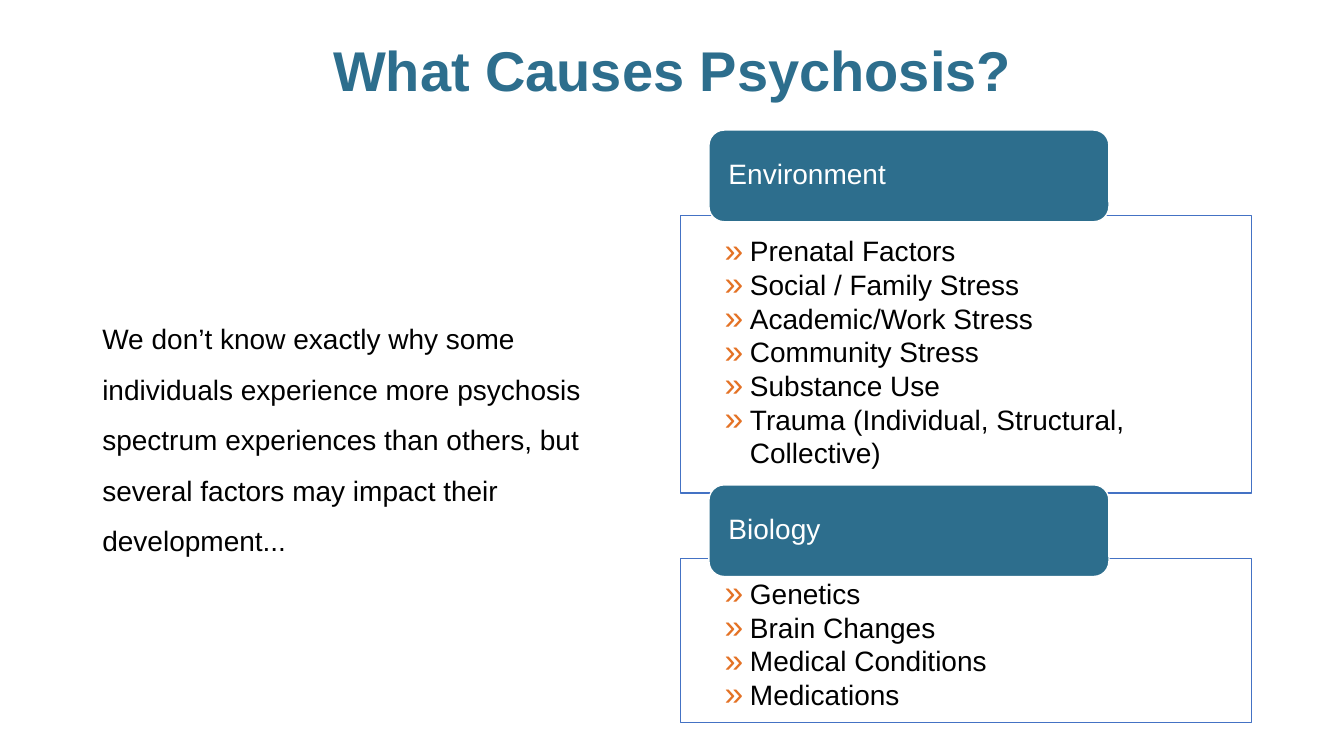
import pptx
import pptx.dml.color
import pptx.enum.shapes
import pptx.enum.text
import pptx.oxml
import pptx.oxml.ns
import pptx.util

Pt = pptx.util.Pt
RGBColor = pptx.dml.color.RGBColor
MSO_SHAPE = pptx.enum.shapes.MSO_SHAPE
MSO_ANCHOR = pptx.enum.text.MSO_ANCHOR
PP_ALIGN = pptx.enum.text.PP_ALIGN

TEAL = RGBColor(0x2D, 0x6E, 0x8D)
ORANGE = RGBColor(0xE4, 0x72, 0x25)
BLUE = RGBColor(0x44, 0x72, 0xC4)
WHITE = RGBColor(0xFF, 0xFF, 0xFF)
BLACK = RGBColor(0x00, 0x00, 0x00)
FONT = "Arial"

CAUSES = [
    ("Environment", 92.9, 154.1, 198,
     ["Prenatal Factors", "Social / Family Stress", "Academic/Work Stress",
      "Community Stress", "Substance Use",
      "Trauma (Individual, Structural, Collective)"]),
    ("Biology", 346.3, 398.9, 117.4,
     ["Genetics", "Brain Changes", "Medical Conditions", "Medications"]),
]


def add_text(paragraph, text, size, color, bold=False):
    """Add one formatted run to a paragraph."""
    run = paragraph.add_run()
    run.text = text
    run.font.name = FONT
    run.font.size = Pt(size)
    run.font.bold = bold
    run.font.color.rgb = color


def set_margins(frame, left, top, right, bottom):
    """Set the four insets of a text frame and wrap its text."""
    frame.word_wrap = True
    frame.margin_left, frame.margin_top = Pt(left), Pt(top)
    frame.margin_right, frame.margin_bottom = Pt(right), Pt(bottom)


def add_panel(slide, preset, box, fill, line):
    """Add a filled and outlined shape without shadow."""
    panel = slide.shapes.add_shape(preset, *map(Pt, box))
    panel.shadow.inherit = False
    panel.fill.solid()
    panel.fill.fore_color.rgb = fill
    panel.line.color.rgb = line
    panel.line.width = Pt(1)
    return panel


def add_bullet(paragraph):
    """Give a paragraph a hanging orange guillemet."""
    properties = paragraph._p.get_or_add_pPr()
    properties.set("marL", str(Pt(18)))
    properties.set("indent", str(-Pt(18)))
    namespace = pptx.oxml.ns.nsdecls("a")
    for element in (
        f'<a:buClr {namespace}><a:srgbClr val="{ORANGE}"/></a:buClr>',
        f'<a:buSzPct {namespace} val="120000"/>',
        f'<a:buFont {namespace} typeface="{FONT}"/>',
        f'<a:buChar {namespace} char="»"/>',
    ):
        properties.append(pptx.oxml.parse_xml(element))


def add_title(slide, left, top, width, height):
    """Place and fill the slide title."""
    title = slide.shapes.title
    title.left, title.top = Pt(left), Pt(top)
    title.width, title.height = Pt(width), Pt(height)
    frame = title.text_frame
    frame.word_wrap = True
    frame.vertical_anchor = MSO_ANCHOR.MIDDLE
    heading = frame.paragraphs[0]
    heading.alignment = PP_ALIGN.CENTER
    heading.line_spacing = 0.9
    add_text(heading, "What Causes Psychosis?", 40, TEAL, bold=True)


def add_introduction(slide, left, top, width, height):
    """Place the introductory statement."""
    introduction = slide.shapes.add_textbox(Pt(left), Pt(top), Pt(width), Pt(height))
    frame = introduction.text_frame
    frame.word_wrap = True
    frame.vertical_anchor = MSO_ANCHOR.MIDDLE
    statement = frame.paragraphs[0]
    statement.line_spacing = 1.5
    add_text(statement, "We don’t know exactly why some individuals experience more "
             "psychosis spectrum experiences than others, but several factors may "
             "impact their development...", 20, BLACK)


def add_factors(slide, left, top, width, height, factors):
    """Draw the outlined list of factors."""
    panel = add_panel(slide, MSO_SHAPE.RECTANGLE, (left, top, width, height), WHITE, BLUE)
    color = panel.fill._xPr.find(".//" + pptx.oxml.ns.qn("a:srgbClr"))
    color.append(pptx.oxml.parse_xml(
        f'<a:alpha {pptx.oxml.ns.nsdecls("a")} val="90000"/>'))
    frame = panel.text_frame
    set_margins(frame, 31.7, 13, 31.7, 11.5)
    frame.vertical_anchor = MSO_ANCHOR.TOP
    for index, factor in enumerate(factors):
        item = frame.add_paragraph() if index else frame.paragraphs[0]
        item.alignment = PP_ALIGN.LEFT
        add_bullet(item)
        add_text(item, factor, 20, BLACK)


def add_header(slide, left, top, width, height, category):
    """Draw the rounded header of a category."""
    header = add_panel(slide, MSO_SHAPE.ROUNDED_RECTANGLE,
                       (left, top, width, height), TEAL, WHITE)
    frame = header.text_frame
    set_margins(frame, 10.8, 0, 10.8, 0)
    frame.vertical_anchor = MSO_ANCHOR.MIDDLE
    label = frame.paragraphs[0]
    label.alignment = PP_ALIGN.LEFT
    label.line_spacing = 0.9
    add_text(label, category, 20, WHITE)


def add_causes(slide, left, width):
    """Stack the categories in one column."""
    for category, header_top, list_top, list_height, factors in CAUSES:
        add_factors(slide, left, list_top, width, list_height, factors)
        add_header(slide, left + width * 0.05, header_top, width * 0.7, 65.5, category)


def main():
    """Build and save the slide."""
    presentation = pptx.Presentation()
    presentation.slide_width, presentation.slide_height = Pt(960), Pt(540)
    slide = presentation.slides.add_slide(presentation.slide_layouts[5])
    add_title(slide, 66, 0, 828, 104.4)
    add_introduction(slide, 66, 154, 365, 308)
    add_causes(slide, 486, 408.2)
    presentation.save("out.pptx")


if __name__ == "__main__":
    main()
